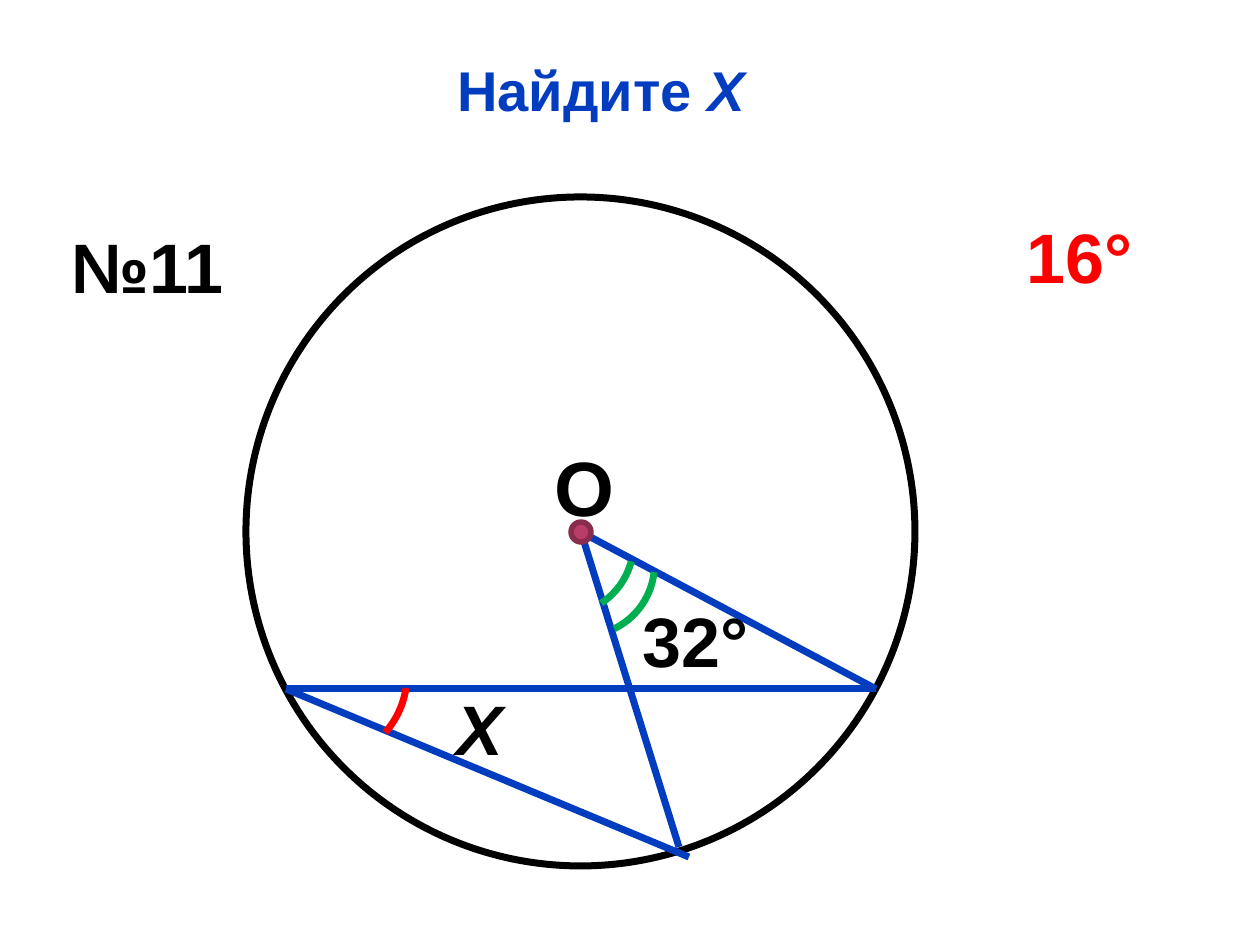
"""Builds a geometry slide: find the inscribed angle from the central angle."""
from lxml import etree
from pptx import Presentation, util as u
from pptx.dml.color import RGBColor
from pptx.enum import shapes, text
from pptx.oxml.ns import qn

PX = 914400 / 126
COLORS = {"blue": "033DBF", "black": "000000", "white": "FFFFFF", "red": "FF0000",
          "green": "00B050", "plum": "B83D68", "dark plum": "882D4D"}


def emu(*lengths):
    return [u.Emu(round(length * PX)) for length in lengths]


def add_run(paragraph, wording, size, color, italic=False):
    run = paragraph.add_run()
    run.text = wording
    run.font.name = "Arial"
    run.font.size = u.Pt(size)
    run.font.bold = True
    run.font.italic = italic
    run.font.color.rgb = RGBColor.from_string(COLORS[color])


prs = Presentation()
prs.slide_width, prs.slide_height = emu(1260, 945)
slide = prs.slides.add_slide(prs.slide_layouts[5])

title = slide.shapes.title
title.left, title.top, title.width, title.height = emu(-29, 49, 1260, 81)
heading = title.text_frame.paragraphs[0]
heading.alignment = text.PP_ALIGN.CENTER
add_run(heading, "Найдите ", 32, "blue")
add_run(heading, "Х", 32, "blue", italic=True)

circle = slide.shapes.add_shape(shapes.MSO_SHAPE.OVAL, *emu(246, 197, 669, 669))
center_dot = slide.shapes.add_shape(shapes.MSO_SHAPE.OVAL, *emu(571, 522, 20, 20))
for disc, fill, outline, weight in [(circle, "white", "black", 4),
                                    (center_dot, "plum", "dark plum", 3.15)]:
    disc.shadow.inherit = False
    disc.fill.solid()
    disc.fill.fore_color.rgb = RGBColor.from_string(COLORS[fill])
    disc.line.color.rgb = RGBColor.from_string(COLORS[outline])
    disc.line.width = u.Pt(weight)

center, left_point, right_point = (581, 532), (286, 689), (876, 689)
for start, end in [((679, 847), center), (right_point, center),
                   (right_point, left_point), ((689, 857), left_point)]:
    segment = slide.shapes.add_connector(shapes.MSO_CONNECTOR.STRAIGHT, *emu(*start, *end))
    segment.line.color.rgb = RGBColor.from_string(COLORS["blue"])
    segment.line.width = u.Pt(4)
    etree.SubElement(segment._element.spPr, qn("a:effectLst"))

for box, rotation, degrees, color in [
    ((246, 591, 161, 168), 0, (9.3, 44.4), "red"),
    ((498, 483, 137, 130), 134.7, (237.04, 283.15), "green"),
    ((519, 504, 137, 130), 134.7, (228.05, 291.31), "green"),
]:
    angle_mark = slide.shapes.add_shape(shapes.MSO_SHAPE.ARC, *emu(*box))
    angle_mark.rotation = rotation
    for index, degree in enumerate(degrees):
        angle_mark.adjustments[index] = degree * 0.6
    angle_mark.shadow.inherit = False
    angle_mark.fill.background()
    angle_mark.line.color.rgb = RGBColor.from_string(COLORS[color])
    angle_mark.line.width = u.Pt(4)

for wording, box, size, color, italic, wrap in [
    ("О", (542, 433, 86, 106), 44, "black", False, False),
    ("32°", (630, 591, 132, 97), 40, "black", False, False),
    ("Х", (444, 679, 178, 97), 40, "black", True, True),
    ("№11", (59, 217, 186, 97), 40, "black", False, True),
    ("16°", (1014, 207, 147, 97), 40, "red", False, True),
]:
    label = slide.shapes.add_textbox(*emu(*box)).text_frame
    label.word_wrap = wrap
    label.auto_size = text.MSO_AUTO_SIZE.SHAPE_TO_FIT_TEXT
    add_run(label.paragraphs[0], wording, size, color, italic)

slide.shapes._spTree.append(center_dot._element)

prs.save("out.pptx")
